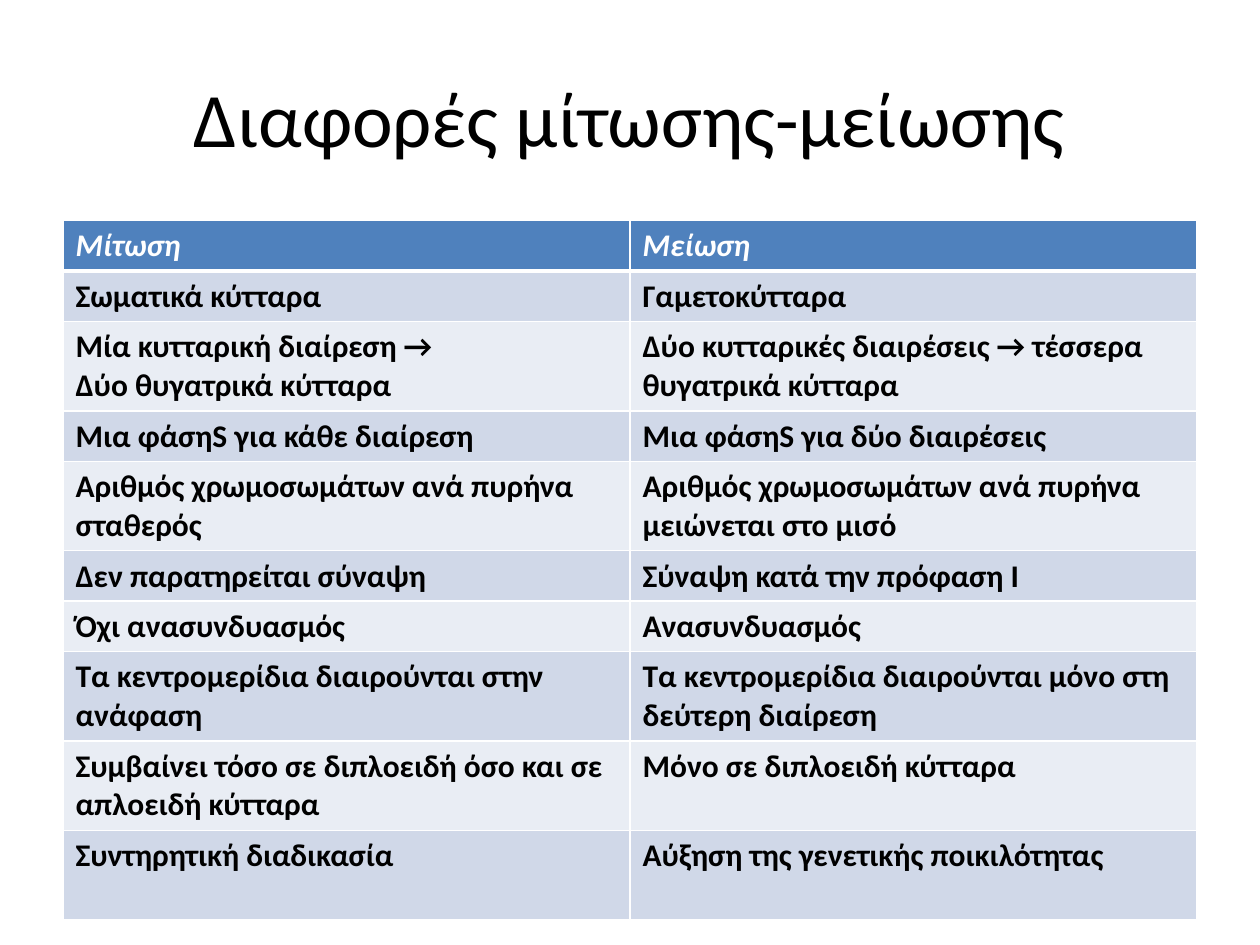
"""Build a slide that compares mitosis and meiosis in a two-column table."""
from dataclasses import dataclass

from lxml import etree
from pptx import Presentation
from pptx import util as u
from pptx.dml.color import RGBColor
from pptx.enum import text
from pptx.oxml import ns


@dataclass(frozen=True)
class Theme:
    font: str = "Calibri"
    title_size: int = 44
    cell_size: int = 18
    ink: str = "000000"
    white: str = "FFFFFF"
    header: str = "4F81BD"
    bands: tuple = ("D0D8E8", "E9EDF4")


theme = Theme()


def write(para, words, color, **formats):
    span = para.add_run()
    span.text = words
    span.font.color.rgb = RGBColor.from_string(color)
    for name, value in {"name": theme.font, **formats}.items():
        setattr(span.font, name, value)


def add_border(cell, side, width):
    line = etree.SubElement(cell._tc.get_or_add_tcPr(), ns.qn(f"a:ln{side}"), w=str(u.Pt(width)))
    fill = etree.SubElement(line, ns.qn("a:solidFill"))
    etree.SubElement(fill, ns.qn("a:srgbClr"), val=theme.white)


rows = [
    ("Μίτωση", "Μείωση"),
    ("Σωματικά κύτταρα", "Γαμετοκύτταρα"),
    ("Μία κυτταρική διαίρεση →\nΔύο θυγατρικά κύτταρα",
     "Δύο κυτταρικές διαιρέσεις → τέσσερα θυγατρικά κύτταρα"),
    ("Μια φάσηS για κάθε διαίρεση", "Μια φάσηS για δύο διαιρέσεις"),
    ("Αριθμός χρωμοσωμάτων ανά πυρήνα σταθερός",
     "Αριθμός χρωμοσωμάτων ανά πυρήνα μειώνεται στο μισό"),
    ("Δεν παρατηρείται σύναψη", "Σύναψη κατά την πρόφαση Ι"),
    ("Όχι ανασυνδυασμός", "Ανασυνδυασμός"),
    ("Τα κεντρομερίδια διαιρούνται στην ανάφαση",
     "Τα κεντρομερίδια διαιρούνται μόνο στη δεύτερη διαίρεση"),
    ("Συμβαίνει τόσο σε διπλοειδή όσο και σε απλοειδή κύτταρα",
     "Μόνο σε διπλοειδή κύτταρα"),
    ("Συντηρητική διαδικασία", "Αύξηση της γενετικής ποικιλότητας"),
]
tall_rows = {2, 4, 7, 8, 9}

deck = Presentation()
deck.slide_width, deck.slide_height = u.Inches(10), u.Inches(7.5)
page = deck.slides.add_slide(deck.slide_layouts[6])

title = page.shapes.add_textbox(u.Inches(0.5), u.Inches(0.3), u.Inches(9), u.Inches(1.25))
frame = title.text_frame
for name, value in {"word_wrap": True, "vertical_anchor": text.MSO_ANCHOR.MIDDLE}.items():
    setattr(frame, name, value)
frame.paragraphs[0].alignment = text.PP_ALIGN.CENTER
write(frame.paragraphs[0], "Διαφορές μίτωσης-μείωσης", theme.ink, size=u.Pt(theme.title_size))

table = page.shapes.add_table(
    len(rows), 2, u.Inches(0.5), u.Inches(1.75), u.Inches(9), u.Inches(5.55)
).table
for row_index, row in enumerate(rows):
    is_header = row_index == 0
    table.rows[row_index].height = u.Inches(0.71 if row_index in tall_rows else 0.4)
    back = theme.header if is_header else theme.bands[(row_index - 1) % 2]
    for column_index, words in enumerate(row):
        cell = table.cell(row_index, column_index)
        for side in "LRTB":
            thick = (is_header and side == "B") or (row_index == 1 and side == "T")
            add_border(cell, side, 3 if thick else 1)
        cell.fill.solid()
        cell.fill.fore_color.rgb = RGBColor.from_string(back)
        for line_index, line in enumerate(words.split("\n")):
            body = cell.text_frame
            para = body.add_paragraph() if line_index else body.paragraphs[0]
            write(para, line, theme.white if is_header else theme.ink,
                  size=u.Pt(theme.cell_size), bold=True, italic=is_header)

deck.save("out.pptx")
